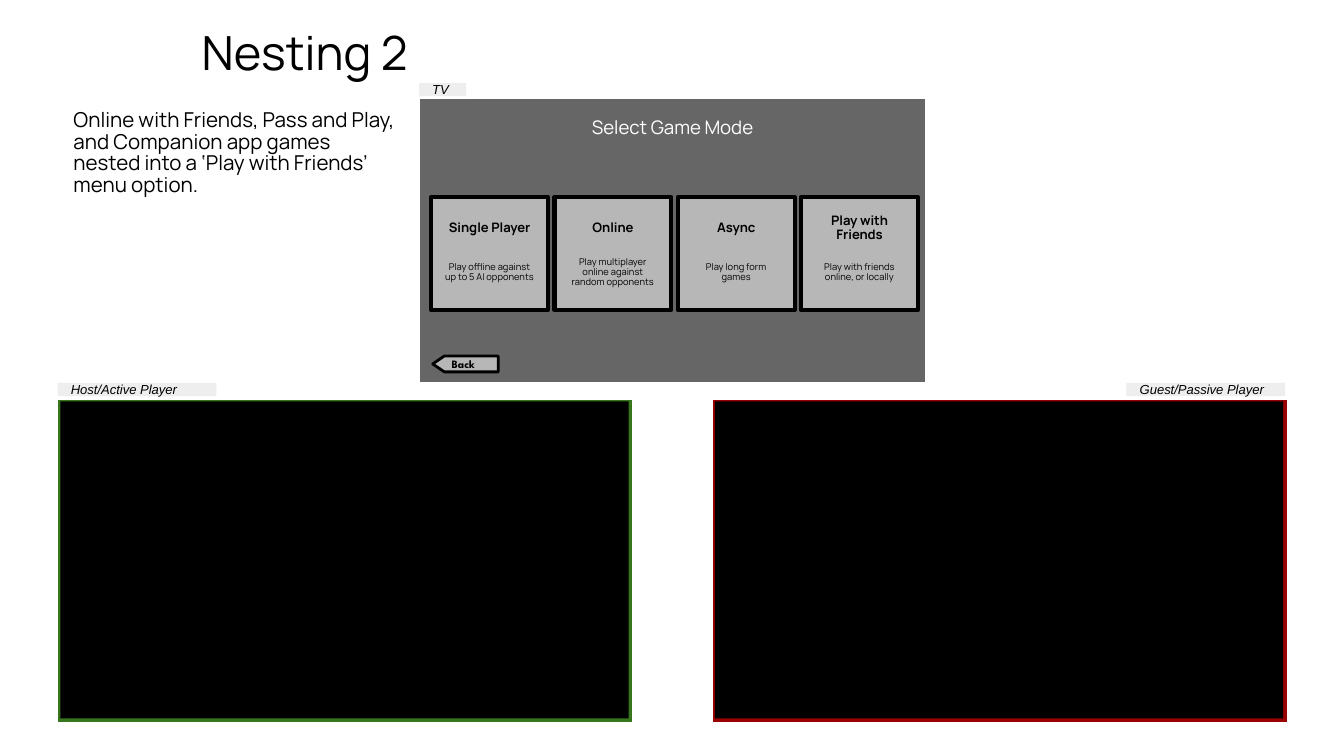
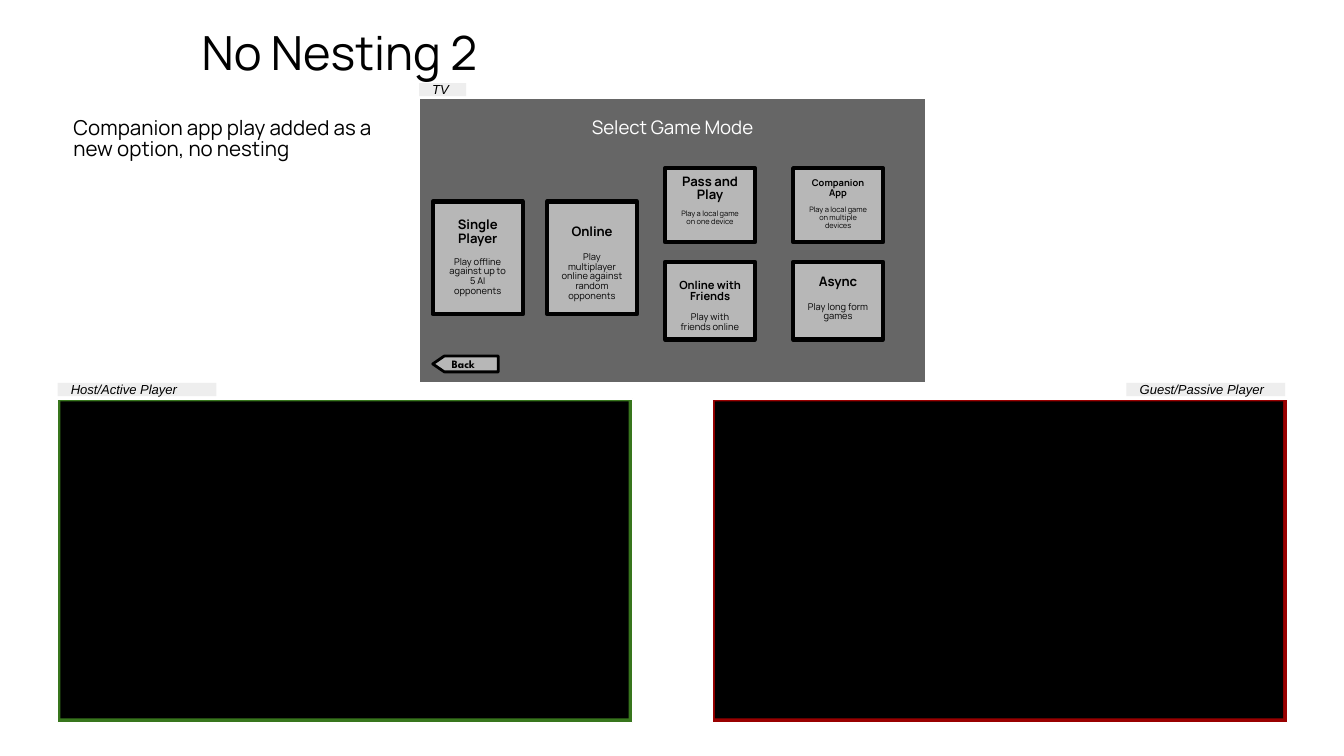
from pptx import Presentation
from pptx import util as u
from pptx.dml.color import RGBColor
from pptx.enum import shapes, text

WHITE = RGBColor(0xFF, 0xFF, 0xFF)
BLACK = RGBColor(0x00, 0x00, 0x00)
HOST_GREEN = RGBColor(0x38, 0x76, 0x1D)
GUEST_RED = RGBColor(0x99, 0x00, 0x00)
TV_GREY = RGBColor(0x66, 0x66, 0x66)
CARD_GREY = RGBColor(0xB7, 0xB7, 0xB7)
TAB_GREY = RGBColor(0xEE, 0xEE, 0xEE)

LEFT, CENTER = text.PP_ALIGN.LEFT, text.PP_ALIGN.CENTER
TOP, MIDDLE = text.MSO_ANCHOR.TOP, text.MSO_ANCHOR.MIDDLE
INSET = u.Cm(0.25)
TITLE_ONLY = 5


class MenuDeck:
    """Holds the presentation, its style and the slide being built."""

    font = "Manrope"
    tab_font = "Arial"
    button_font = "League Spartan"
    tight = 0.88

    def __init__(self):
        self.presentation = Presentation()
        self.presentation.slide_width = u.Cm(25.4)
        self.presentation.slide_height = u.Cm(14.29)
        self.slide = None

    def set_text(self, shape, words, size, font=None, color=BLACK, bold=False,
                 italic=False, align=LEFT, anchor=MIDDLE, spacing=1.0):
        frame = shape.text_frame
        frame.word_wrap = True
        frame.auto_size = text.MSO_AUTO_SIZE.NONE
        frame.vertical_anchor = anchor
        frame.margin_left = frame.margin_right = INSET
        frame.margin_top = frame.margin_bottom = INSET
        paragraph = frame.paragraphs[0]
        paragraph.alignment = align
        paragraph.line_spacing = spacing
        run = paragraph.add_run()
        run.text = words
        run.font.name = font or self.font
        run.font.size = u.Pt(size)
        run.font.bold = bold
        run.font.italic = italic
        run.font.color.rgb = color

    def box(self, left, top, width, height, fill, line=None, weight=0.75,
            kind=shapes.MSO_SHAPE.RECTANGLE):
        shape = self.slide.shapes.add_shape(
            kind, u.Cm(left), u.Cm(top), u.Cm(width), u.Cm(height))
        shape.shadow.inherit = False
        shape.fill.solid()
        shape.fill.fore_color.rgb = fill
        if line is None:
            shape.line.fill.background()
        else:
            shape.line.color.rgb = line
            shape.line.width = u.Pt(weight)
        return shape

    def label(self, left, top, width, height, words, size, **style):
        shape = self.slide.shapes.add_textbox(
            u.Cm(left), u.Cm(top), u.Cm(width), u.Cm(height))
        self.set_text(shape, words, size, **style)

    def title(self, words):
        shape = self.slide.shapes.title
        shape.left, shape.top = u.Cm(3.56), u.Cm(0.18)
        shape.width, shape.height = u.Cm(13), u.Cm(1.6)
        self.set_text(shape, words, 25.2)

    def tab(self, left, top, width, words):
        shape = self.box(left, top, width, 0.25, TAB_GREY)
        self.set_text(shape, words, 7, font=self.tab_font, italic=True)

    def player_screen(self, left, color):
        self.box(left, 7.54, 10.87, 6.12, color, WHITE)
        self.box(left + 0.05, 7.59, 10.74, 5.99, BLACK)

    def back_button(self):
        shape = self.box(8.18, 6.73, 1.24, 0.3, CARD_GREY, BLACK, 1.5,
                         shapes.MSO_SHAPE.PENTAGON)
        shape.adjustments[0] = 0.73
        shape.element.spPr.xfrm.set("flipH", "1")
        self.set_text(shape, "Back", 6, font=self.button_font, bold=True)

    def card(self, left, top, width, height, name, detail, name_size=7,
             detail_size=5, drops=(0.19, 1.03), text_height=0.79):
        """Draw a mode card; drops are the offsets of name and detail."""
        self.box(left, top, width, height, CARD_GREY, BLACK, 2.25)
        lines = ((name, name_size, True), (detail, detail_size, False))
        for drop, (words, size, bold) in zip(drops, lines):
            self.label(left, top + drop, width, text_height, words, size,
                       bold=bold, align=CENTER, spacing=self.tight)

    def start(self, title, note, note_top):
        """Add a slide with everything the menu slides share."""
        layout = self.presentation.slide_layouts[TITLE_ONLY]
        self.slide = self.presentation.slides.add_slide(layout)
        self.player_screen(1.09, HOST_GREEN)
        self.player_screen(13.46, GUEST_RED)
        self.box(7.92, 1.85, 9.58, 5.38, TV_GREY, WHITE)
        self.tab(1.09, 7.24, 3, "Host/Active Player")
        self.tab(21.29, 7.24, 3, "Guest/Passive Player")
        self.tab(7.92, 1.57, 0.89, "TV")
        self.label(10.13, 2.13, 5.16, 0.56, "Select Game Mode", 10,
                   color=WHITE, align=CENTER)
        self.label(1.14, note_top, 6.58, 5.36, note, 11, anchor=TOP,
                   spacing=self.tight)
        self.back_button()
        self.title(title)


SINGLE = ("Single Player", "Play offline against up to 5 AI opponents")
ONLINE = ("Online", "Play multiplayer online against random opponents")
ASYNC = ("Async", "Play long form games")


def nesting(deck):
    deck.start("Nesting 2",
               "Online with Friends, Pass and Play, and Companion app games "
               "nested into a ‘Play with Friends’ menu option.", 1.83)
    friends = ("Play with Friends", "Play with friends online, or locally")
    for column, mode in enumerate((SINGLE, ONLINE, ASYNC, friends)):
        deck.card(8.15 + 2.33 * column, 3.73, 2.21, 2.13, *mode)


def no_nesting(deck):
    deck.start("No Nesting 2",
               "Companion app play added as a new option, no nesting", 1.98)
    for column, mode in enumerate((SINGLE, ONLINE)):
        deck.card(8.18 + 2.16 * column, 3.81, 1.7, 2.13, *mode)

    near, far = 12.57, 14.99
    upper, lower = (3.18, 1.7, 1.4), (4.95, 1.7, 1.47)
    high, low = (0.13, 0.69), (0.3, 0.89)
    small_cards = (
        (near, upper, "Pass and Play", "Play a local game on one device",
         7, 4, high),
        (far, upper, "Companion App", "Play a local game on multiple devices",
         5, 4, high),
        (near, lower, "Online with Friends", "Play with friends online",
         6, 5, low),
        (far, lower, *ASYNC, 7, 5, high),
    )
    for left, row, *content in small_cards:
        deck.card(left, *row, *content, text_height=0.52)


def main():
    deck = MenuDeck()
    nesting(deck)
    no_nesting(deck)
    deck.presentation.save("out.pptx")


if __name__ == "__main__":
    main()
